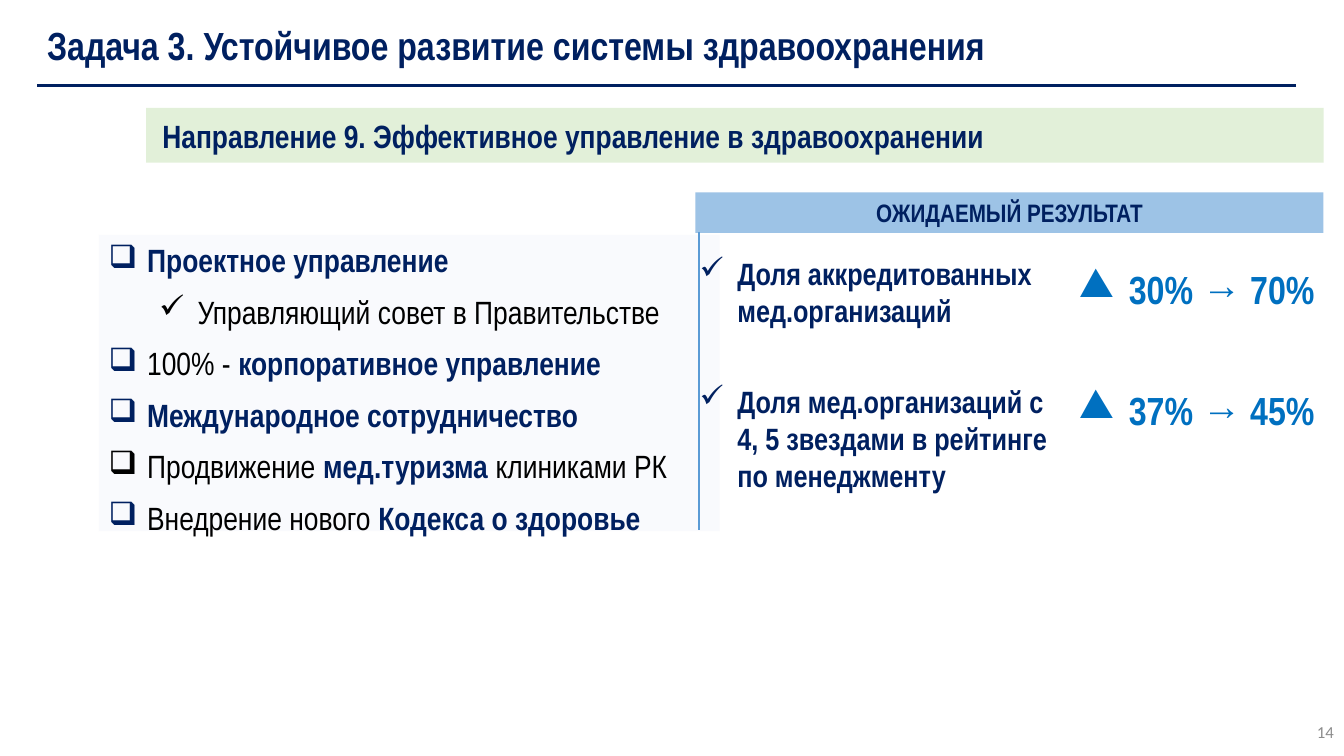
import dataclasses

import lxml.etree
import pptx
import pptx.dml.color
import pptx.enum.shapes
import pptx.enum.text
import pptx.oxml.ns
import pptx.util

Pt = pptx.util.Pt
qn = pptx.oxml.ns.qn
ALIGN = pptx.enum.text.PP_ALIGN
ANCHOR = pptx.enum.text.MSO_ANCHOR


@dataclasses.dataclass(frozen=True)
class Theme:
    font: str = "Arial Narrow"
    number_font: str = "Calibri"
    navy: str = "002060"
    black: str = "000000"
    blue: str = "0070C0"
    grey: str = "8C8C8C"
    green_band: str = "E2F0D9"
    blue_band: str = "9DC3E6"
    panel: str = "F9FAFD"
    divider: str = "5B9BD5"
    title: int = 28
    body: int = 23
    result: int = 22
    header: int = 18
    number: int = 12


THEME = Theme()

MEASURES = [
    ("❑", THEME.navy, [("Проектное управление", True)]),
    ("✓", THEME.black, [("Управляющий совет в Правительстве", False)]),
    ("❑", THEME.navy, [("100% - ", False), ("корпоративное управление", True)]),
    ("❑", THEME.navy, [("Международное сотрудничество", True)]),
    ("❑", THEME.black, [("Продвижение ", False), ("мед.туризма ", True), ("клиниками РК", False)]),
    ("❑", THEME.navy, [("Внедрение нового ", False), ("Кодекса о здоровье", True)]),
]
INDENTS = {"❑": (27.4, 27.4), "✓": (63.4, 27.4)}
RESULTS = [
    "Доля аккредитованных мед.организаций",
    "Доля мед.организаций с 4, 5 звездами в рейтинге по менеджменту",
]
CHANGES = ["30% → 70%", "37% → 45%"]


def rgb(color):
    return pptx.dml.color.RGBColor.from_string(color)


def add_box(s, left, top, width, height, fill=None, alpha=None):
    box = [Pt(v) for v in (left, top, width, height)]
    if fill is None:
        return s.shapes.add_textbox(*box)
    sp = s.shapes.add_shape(pptx.enum.shapes.MSO_SHAPE.RECTANGLE, *box)
    sp.shadow.inherit = False
    sp.line.fill.background()
    sp.fill.solid()
    sp.fill.fore_color.rgb = rgb(fill)
    if alpha is not None:
        clr = sp.fill._xPr.find(qn("a:solidFill"))[0]
        lxml.etree.SubElement(clr, qn("a:alpha")).set("val", str(alpha * 1000))
    return sp


def set_frame(sp, anchor=ANCHOR.TOP, insets=(7.2, 3.6, 7.2, 3.6)):
    tf = sp.text_frame
    tf.word_wrap = True
    tf.vertical_anchor = anchor
    tf.margin_left, tf.margin_top, tf.margin_right, tf.margin_bottom = map(Pt, insets)
    return tf


def set_bullet(p, char, color, left, hanging):
    pPr = p._p.get_or_add_pPr()
    pPr.set("marL", str(Pt(left)))
    pPr.set("indent", str(-Pt(hanging)))
    clr = lxml.etree.SubElement(pPr, qn("a:buClr"))
    lxml.etree.SubElement(clr, qn("a:srgbClr")).set("val", color)
    lxml.etree.SubElement(pPr, qn("a:buChar")).set("char", char)


def add_run(p, text, size, color=THEME.navy, bold=True, font=THEME.font):
    r = p.add_run()
    r.text = text
    r.font.size = Pt(size)
    r.font.name = font
    r.font.bold = bold
    r.font.color.rgb = rgb(color)


def add_paragraph(tf, index, align=ALIGN.LEFT, after=0, spacing=1.0):
    p = tf.add_paragraph() if index else tf.paragraphs[0]
    p.alignment = align
    p.space_after = Pt(after)
    p.line_spacing = spacing
    return p


def add_label(s, box, text, size, fill=None, align=ALIGN.LEFT, insets=(7.2, 3.6, 7.2, 3.6), **fmt):
    tf = set_frame(add_box(s, *box, fill=fill), ANCHOR.MIDDLE, insets)
    add_run(add_paragraph(tf, 0, align), text, size, **fmt)


def add_line(s, x1, y1, x2, y2, color, width):
    cx = s.shapes.add_connector(pptx.enum.shapes.MSO_CONNECTOR.STRAIGHT, Pt(x1), Pt(y1), Pt(x2), Pt(y2))
    cx.line.color.rgb = rgb(color)
    cx.line.width = Pt(width)
    lxml.etree.SubElement(cx._element.spPr, qn("a:effectLst"))


def add_measures(s, box):
    sp = add_box(s, *box, fill=THEME.panel, alpha=90)
    tf = set_frame(sp, insets=(7.2, 7.2, 10, 11.5))
    for i, (char, color, parts) in enumerate(MEASURES):
        p = add_paragraph(tf, i, after=12, spacing=0.9)
        set_bullet(p, char, color, *INDENTS[char])
        for text, strong in parts:
            add_run(p, text, THEME.body, THEME.navy if strong else THEME.black, strong)


def add_bullets(s, box, items, char, hanging, after, size, color):
    tf = set_frame(add_box(s, *box), insets=(2.9, 3.6, 0, 3.6))
    for i, text in enumerate(items):
        p = add_paragraph(tf, i, after=after)
        set_bullet(p, char, color, hanging, hanging)
        add_run(p, text, size, color)


def main():
    prs = pptx.Presentation()
    prs.slide_width, prs.slide_height = Pt(960), Pt(540)
    s = prs.slides.add_slide(prs.slide_layouts[6])

    add_label(s, (26.6, 2.2, 816.5, 59), "Задача 3. Устойчивое развитие системы здравоохранения", THEME.title)
    add_label(s, (917.3, 506.9, 42.5, 31.7), "14", THEME.number, align=ALIGN.RIGHT,
              color=THEME.grey, bold=False, font=THEME.number_font)
    add_line(s, 925.9, 61.2, 26.6, 61.2, THEME.navy, 2.25)
    add_label(s, (104.4, 77, 841, 39.2), "Направление 9. Эффективное управление в здравоохранении",
              THEME.body, fill=THEME.green_band, insets=(11.5, 6.5, 11.5, 6.5))
    add_measures(s, (70.6, 167.8, 443.5, 211.7))
    add_label(s, (496.8, 137.5, 448.6, 28.8), "ОЖИДАЕМЫЙ РЕЗУЛЬТАТ", THEME.header,
              fill=THEME.blue_band, align=ALIGN.CENTER)
    add_bullets(s, (496.8, 178.6, 265, 185), RESULTS, "✓", 27, 38.4, THEME.result, THEME.navy)
    add_bullets(s, (767.5, 185.8, 177.1, 134.6), CHANGES, "▲", 36, 52.8, THEME.title, THEME.blue)
    add_line(s, 499, 165.6, 499, 378.7, THEME.divider, 1.5)

    prs.save("out.pptx")


if __name__ == "__main__":
    main()
